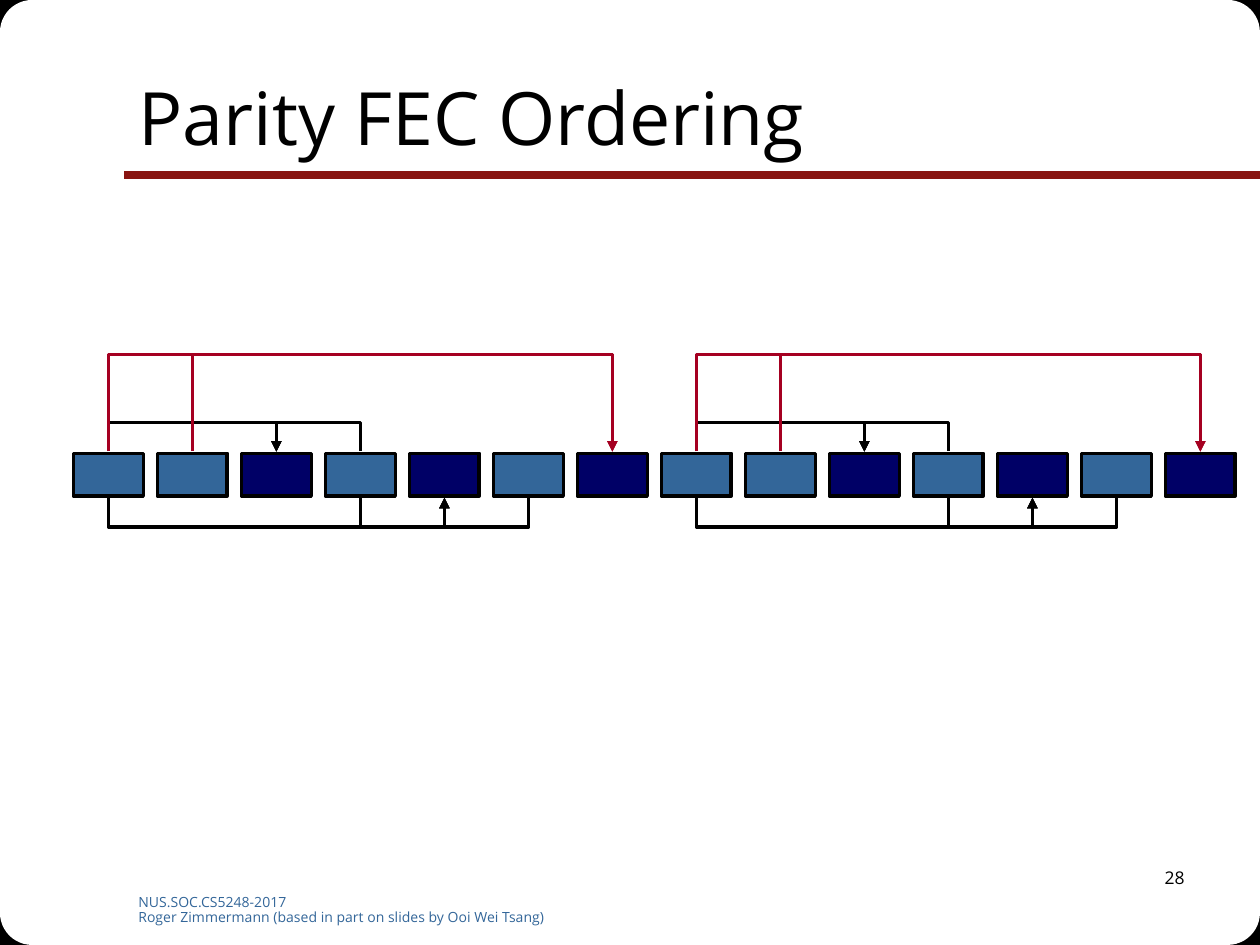
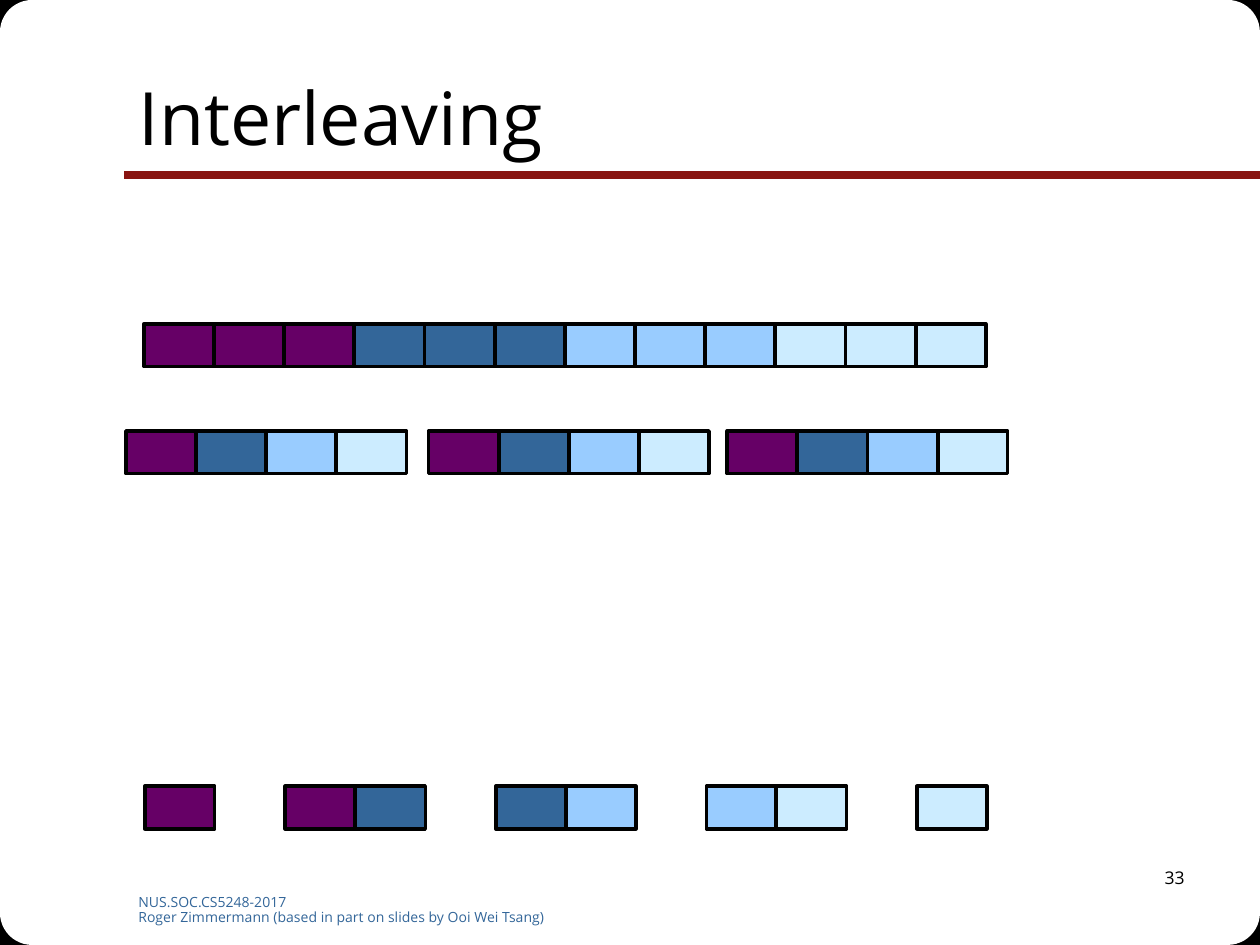
from lxml import etree
from pptx import Presentation
from pptx.dml.color import RGBColor
from pptx.enum.shapes import MSO_CONNECTOR, MSO_SHAPE
from pptx.enum.text import MSO_ANCHOR, MSO_AUTO_SIZE, PP_ALIGN
from pptx.oxml.ns import qn
from pptx.util import Cm, Pt

RECT = MSO_SHAPE.RECTANGLE
ROUNDED = MSO_SHAPE.ROUNDED_RECTANGLE
STRAIGHT = MSO_CONNECTOR.STRAIGHT
ELBOW = MSO_CONNECTOR.ELBOW
LEFT, RIGHT = PP_ALIGN.LEFT, PP_ALIGN.RIGHT
MIDDLE = MSO_ANCHOR.MIDDLE
NO_FIT = MSO_AUTO_SIZE.NONE

FONT = "Open Sans"
BLACK, WHITE = "000000", "FFFFFF"
RULE_RED, ARROW_RED = "891411", "A50021"
DATA_BLUE, PARITY_NAVY = "336699", "000066"
UNIT_COLORS = ["660066", DATA_BLUE, "99CCFF", "CCECFF"]

# Lengths in centimetres
SLIDE_W, SLIDE_H = 25.4, 19.05
BOX_W, BOX_H = 1.41, 0.86

# Parity stream
STREAM_X, STREAM_Y = 1.48, 9.14
STREAM_PITCH = 5.08 / 3
STREAM_GROUP = 7
PARITY_SLOTS = (2, 4, 6)
ARROW_TOP, ARROW_BOTTOM = 9.1, 10.03
ELBOW_DEPTH = 0.01

# Each link: colour, source slots, parity slot, reach (negative is above)
PARITY_LINKS = [
    (BLACK, (1, 0, 3), 2, -0.58),
    (BLACK, (0, 3, 5), 4, 0.6),
    (ARROW_RED, (0, 1), 6, -1.95),
]

# Interleaved units
UNIT_PITCH = 1.415
UNITS_PER_PACKET = 3


def rgb(color):
    return RGBColor.from_string(color)


def style_text(tf, size, color, align=LEFT, spacing=None):
    tf.word_wrap = True
    tf.auto_size = NO_FIT
    for p in tf.paragraphs:
        p.alignment = align
        p.line_spacing = spacing
        for r in p.runs:
            r.font.name = FONT
            r.font.size = Pt(size)
            r.font.color.rgb = rgb(color)


def add_text(s, text, box, size, color, align=LEFT, spacing=None):
    tf = s.shapes.add_textbox(*map(Cm, box)).text_frame
    tf.text = text
    style_text(tf, size, color, align, spacing)


def add_block(s, kind, box, fill, line_width=0):
    sp = s.shapes.add_shape(kind, *map(Cm, box))
    sp.shadow.inherit = False
    sp.fill.solid()
    sp.fill.fore_color.rgb = rgb(fill)
    if line_width:
        sp.line.color.rgb = rgb(BLACK)
        sp.line.width = Pt(line_width)
    else:
        sp.line.fill.background()
    return sp


def add_unit(s, x, y, fill):
    add_block(s, RECT, (x, y, BOX_W, BOX_H), fill, 2)


def add_line(s, kind, ends, color, width):
    c = s.shapes.add_connector(kind, *map(Cm, ends))
    c.line.color.rgb = rgb(color)
    c.line.width = Pt(width)
    etree.SubElement(c._element.spPr, qn("a:effectLst"))
    return c


def add_elbow_arrow(s, x1, x2, y, reach, color):
    """Arrow from x1 to x2 that leaves the row at y, detouring by reach."""
    above = reach < 0
    quarter_turn = above == (x2 > x1)
    cx, span = (x1 + x2) / 2, abs(x2 - x1)
    c = add_line(s, ELBOW, (cx - ELBOW_DEPTH / 2, y - span / 2,
                            cx + ELBOW_DEPTH / 2, y + span / 2), color, 2)
    spPr = c._element.spPr

    # Turn the connector so that its middle segment is horizontal
    xfrm = spPr.find(qn("a:xfrm"))
    xfrm.set("rot", str((90 if quarter_turn else 270) * 60000))
    xfrm.set("flipH", "0" if quarter_turn else "1")
    xfrm.set("flipV", "1" if above else "0")
    geom = spPr.find(qn("a:prstGeom"))
    for old in geom.findall(qn("a:avLst")):
        geom.remove(old)
    guides = etree.SubElement(geom, qn("a:avLst"))
    etree.SubElement(guides, qn("a:gd"), name="adj1",
                     fmla=f"val {round(reach / ELBOW_DEPTH * 100000)}")

    # Arrowhead
    ln = spPr.find(qn("a:ln"))
    etree.SubElement(ln, qn("a:tailEnd"), type="triangle")


def add_frame(s, layout):
    """Draw the rounded corners and title rule, then move them to the layout."""
    for ph in list(layout.placeholders):
        if ph.placeholder_format.idx != 0:
            layout.shapes._spTree.remove(ph._element)
    existing = len(s.shapes)
    for kind, size, fill, width in ((RECT, 1.1, BLACK, 0.75),
                                    (ROUNDED, 3.89, WHITE, 0)):
        for x in (0, SLIDE_W - size):
            for y in (0, SLIDE_H - size):
                add_block(s, kind, (x, y, size, size), fill, width)
    add_line(s, STRAIGHT, (SLIDE_W, 3.53, 2.49, 3.53), RULE_RED, 4.5)
    for sp in list(s.shapes)[existing:]:
        layout.shapes._spTree.append(sp._element)


def add_page(prs, layout, title, number):
    s = prs.slides.add_slide(layout)
    sp = s.shapes.title
    sp.left, sp.top, sp.width, sp.height = map(Cm, (2.54, 0.76, 21.59, 3.18))
    sp.text_frame.text = title
    sp.text_frame.vertical_anchor = MIDDLE
    style_text(sp.text_frame, 42, BLACK)
    add_text(s, "NUS.SOC.CS5248-2017\n"
             "Roger Zimmermann (based in part on slides by Ooi Wei Tsang)",
             (2.54, 17.93, 10.36, 0.71), 8, DATA_BLUE, spacing=0.9)
    add_text(s, str(number), (18.85, 17.35, 5.28, 1.27), 10, BLACK, RIGHT)
    return s


def add_parity_group(s, left):
    for slot in range(STREAM_GROUP):
        fill = PARITY_NAVY if slot in PARITY_SLOTS else DATA_BLUE
        add_unit(s, left + slot * STREAM_PITCH, STREAM_Y, fill)

    def center(slot):
        return left + slot * STREAM_PITCH + BOX_W / 2

    for color, sources, parity, reach in PARITY_LINKS:
        y = ARROW_TOP if reach < 0 else ARROW_BOTTOM
        for source in sources:
            add_elbow_arrow(s, center(source), center(parity), y, reach, color)


def add_unit_row(s, left, top, columns, per_color):
    for col in columns:
        add_unit(s, left + col * UNIT_PITCH, top, UNIT_COLORS[col // per_color])


def main():
    prs = Presentation()
    prs.slide_width, prs.slide_height = Cm(SLIDE_W), Cm(SLIDE_H)
    layout = prs.slide_layouts[5]

    # Parity ordering: two groups of seven packets
    s = add_page(prs, layout, "Parity FEC Ordering", 28)
    add_frame(s, layout)
    for group in range(2):
        add_parity_group(s, STREAM_X + group * STREAM_GROUP * STREAM_PITCH)

    # Interleaving: source order, interleaved packets, units left after a loss
    s = add_page(prs, layout, "Interleaving", 33)
    add_unit_row(s, 2.9, 6.53, range(12), UNITS_PER_PACKET)
    for left in (2.54, 8.64, 14.66):
        add_unit_row(s, left, 8.69, range(4), 1)
    received = [col for col in range(12) if col % UNITS_PER_PACKET != 1]
    add_unit_row(s, 2.92, 15.85, received, UNITS_PER_PACKET)

    prs.save("out.pptx")


if __name__ == "__main__":
    main()
